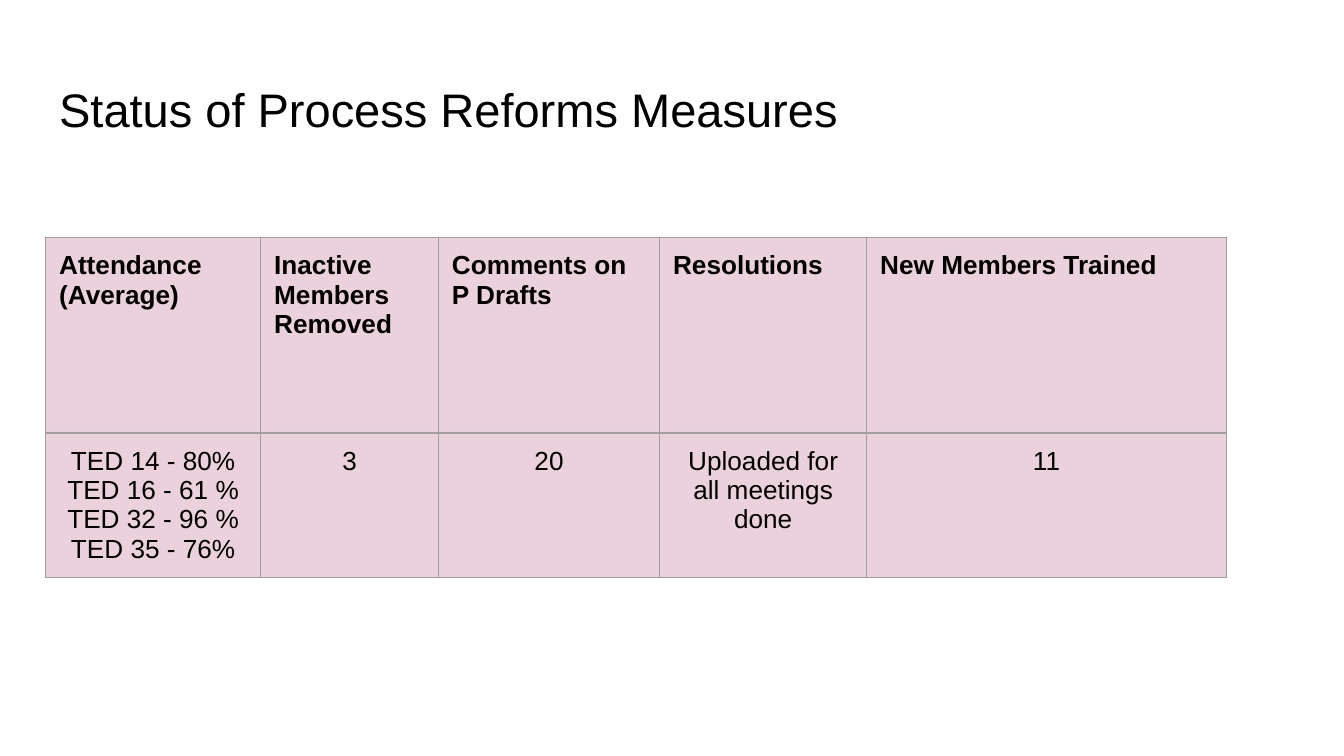
from lxml.etree import SubElement
from pptx import Presentation
from pptx.dml.color import RGBColor
from pptx.enum.text import MSO_ANCHOR, MSO_AUTO_SIZE, PP_ALIGN
from pptx.oxml.ns import qn
from pptx.util import Pt

BLACK = RGBColor(0, 0, 0)
PINK = RGBColor(0xEA, 0xD1, 0xDC)
GRAY = RGBColor(0x9E, 0x9E, 0x9E)

INSET = {f"margin_{side}": Pt(7.2) for side in ("left", "top", "right", "bottom")}
WIDTHS = (115.2, 95.2, 118.5, 111, 192.6)
HEIGHTS = (104.6, 77)
HEADS = (
    "Attendance\n(Average)",
    "Inactive Members Removed",
    "Comments on P Drafts",
    "Resolutions",
    "New Members Trained",
)
VALUES = (
    "TED 14 - 80%\nTED 16 - 61 %\nTED 32 - 96 %\nTED 35 - 76%",
    "3",
    "20",
    "Uploaded for all meetings done",
    "11",
)


def apply(target, values):
    for name, value in values.items():
        setattr(target, name, value)


def write(frame, text, size, bold, align):
    frame.text = text
    for para in frame.paragraphs:
        para.alignment = align
        for run in para.runs:
            apply(run.font, {"name": "Arial", "size": Pt(size), "bold": bold})
            run.font.color.rgb = BLACK


def add_title(slide, left, top, width, height):
    title = slide.shapes.title
    apply(title, {"left": Pt(left), "top": Pt(top),
                  "width": Pt(width), "height": Pt(height)})
    apply(title.text_frame, {
        **INSET, "word_wrap": True, "auto_size": MSO_AUTO_SIZE.NONE,
        "vertical_anchor": MSO_ANCHOR.MIDDLE,
    })
    write(title.text_frame, "Status of Process Reforms Measures",
          25.2, False, PP_ALIGN.LEFT)


def add_border(cell):
    """Draw the four edges; they must come before the cell's fill."""
    props = cell._tc.get_or_add_tcPr()
    for edge in ("lnL", "lnR", "lnT", "lnB"):
        line = SubElement(props, qn(f"a:{edge}"), w=str(Pt(0.75)))
        fill = SubElement(line, qn("a:solidFill"))
        SubElement(fill, qn("a:srgbClr"), val=str(GRAY))


def add_measures(slide, left, top):
    table = slide.shapes.add_table(
        2, len(WIDTHS), Pt(left), Pt(top), Pt(sum(WIDTHS)), Pt(sum(HEIGHTS))
    ).table
    apply(table, {"first_row": False, "horz_banding": False})
    for col, width in zip(table.columns, WIDTHS):
        col.width = Pt(width)
    styles = ((HEADS, True, PP_ALIGN.LEFT), (VALUES, False, PP_ALIGN.CENTER))
    for row, height, (texts, bold, align) in zip(table.rows, HEIGHTS, styles):
        row.height = Pt(height)
        for cell, text in zip(row.cells, texts):
            apply(cell, {**INSET, "vertical_anchor": MSO_ANCHOR.TOP})
            write(cell.text_frame, text, 14, bold, align)
            add_border(cell)
            cell.fill.solid()
            cell.fill.fore_color.rgb = PINK


def main():
    deck = Presentation()
    apply(deck, {"slide_width": Pt(720), "slide_height": Pt(405)})
    slide = deck.slides.add_slide(deck.slide_layouts[5])
    add_title(slide, 24.5, 35.3, 671, 45.4)
    add_measures(slide, 24.5, 127.4)
    deck.save("out.pptx")


if __name__ == "__main__":
    main()
